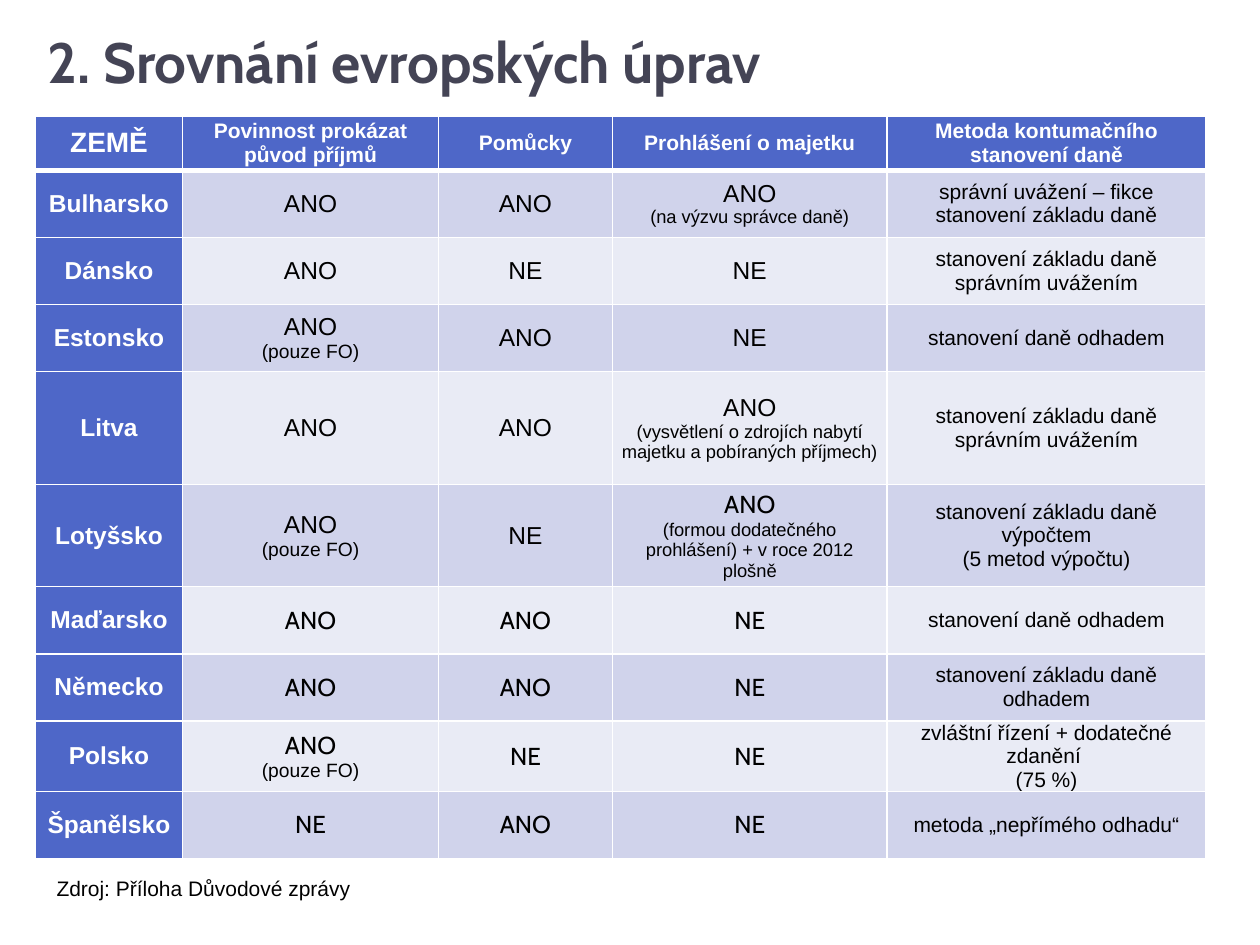
from dataclasses import dataclass

from lxml.etree import SubElement
from pptx import Presentation
from pptx.dml.color import RGBColor
from pptx.enum.text import MSO_ANCHOR, MSO_AUTO_SIZE, PP_ALIGN
from pptx.oxml.ns import qn
from pptx.util import Pt


@dataclass(frozen=True)
class Theme:
    blue: str = "4E67C8"
    band_dark: str = "D0D3EB"
    band_light: str = "E9EBF5"
    white: str = "FFFFFF"
    black: str = "000000"
    title_color: str = "444455"
    body_font: str = "Arial"
    accent_font: str = "Cabin"
    title_size: float = 32.4
    corner_size: float = 16
    answer_size: float = 14
    text_size: float = 12
    note_size: float = 11
    small_note_size: float = 10.5


theme = Theme()


def add_run(paragraph, text, size, color, font=theme.body_font, bold=False):
    run = paragraph.add_run()
    run.text = text
    run.font.name = font
    run.font.size = Pt(size)
    run.font.bold = bold
    run.font.color.rgb = RGBColor.from_string(color)


def add_border(cell, side, width):
    properties = cell._tc.get_or_add_tcPr()
    line = SubElement(properties, qn(f"a:{side}"), w=str(Pt(width)))
    fill = SubElement(line, qn("a:solidFill"))
    SubElement(fill, qn("a:srgbClr"), val=theme.white)


headers = ["ZEMĚ", "Povinnost prokázat původ příjmů", "Pomůcky",
           "Prohlášení o majetku", "Metoda kontumačního stanovení daně"]
countries = [
    ["Bulharsko", ["ANO"], ["ANO"], ["ANO", "(na výzvu správce daně)"],
     ["správní uvážení – fikce stanovení základu daně"]],
    ["Dánsko", ["ANO"], ["NE"], ["NE"], ["stanovení základu daně správním uvážením"]],
    ["Estonsko", ["ANO", "(pouze FO)"], ["ANO"], ["NE"], ["stanovení daně odhadem"]],
    ["Litva", ["ANO"], ["ANO"],
     ["ANO", "(vysvětlení o zdrojích nabytí majetku a pobíraných příjmech)"],
     ["stanovení základu daně správním uvážením"]],
    ["Lotyšsko", ["ANO", "(pouze FO)"], ["NE"],
     ["ANO", "(formou dodatečného prohlášení) + v roce 2012 plošně"],
     ["stanovení základu daně výpočtem", "(5 metod výpočtu)"]],
    ["Maďarsko", ["ANO"], ["ANO"], ["NE"], ["stanovení daně odhadem"]],
    ["Německo", ["ANO"], ["ANO"], ["NE"], ["stanovení základu daně odhadem"]],
    ["Polsko", ["ANO", "(pouze FO)"], ["NE"], ["NE"],
     ["zvláštní řízení + dodatečné zdanění ", "(75 %)"]],
    ["Španělsko", ["NE"], ["ANO"], ["NE"], ["metoda „nepřímého odhadu“"]],
]
column_widths = [84.2, 146.2, 99.4, 157, 182.2]
row_heights = [31, 38.4, 38.4, 38.4, 64.5, 58.3, 38.4, 38.4, 38.9, 38.4]
first_accent_row = 6
accent_cells = {(5, 3)}

presentation = Presentation()
presentation.slide_width = Pt(720)
presentation.slide_height = Pt(540)
slide = presentation.slides.add_slide(presentation.slide_layouts[6])

table = slide.shapes.add_table(
    len(row_heights), len(column_widths), Pt(20.2), Pt(66.3),
    Pt(sum(column_widths)), Pt(sum(row_heights))).table
table.first_col = True
for column, width in zip(table.columns, column_widths):
    column.width = Pt(width)
for row, height in zip(table.rows, row_heights):
    row.height = Pt(height)

rows = [[[header] for header in headers]]
rows += [[[country], *answers] for country, *answers in countries]
for row_index, row in enumerate(rows):
    for column_index, lines in enumerate(row):
        cell = table.cell(row_index, column_index)
        cell.vertical_anchor = MSO_ANCHOR.MIDDLE
        cell.margin_left = cell.margin_right = Pt(3.6)
        cell.margin_top = cell.margin_bottom = 0
        for side in ("lnL", "lnR", "lnT", "lnB"):
            header_edge = (row_index, side) in ((0, "lnB"), (1, "lnT"))
            add_border(cell, side, 3 if header_edge else 1)

        heading = row_index == 0 or column_index == 0
        band = theme.band_dark if row_index % 2 else theme.band_light
        cell.fill.solid()
        cell.fill.fore_color.rgb = RGBColor.from_string(theme.blue if heading else band)

        paragraph = cell.text_frame.paragraphs[0]
        for line_index, line in enumerate(lines):
            if line_index and line.startswith("(75"):
                paragraph.add_line_break()
            elif line_index:
                paragraph = cell.text_frame.add_paragraph()
            paragraph.alignment = PP_ALIGN.CENTER
            font = theme.body_font
            if heading:
                paragraph.space_after = Pt(6)
                size = theme.text_size if row_index == 0 else theme.answer_size
                if row_index == column_index:
                    size = theme.corner_size
            elif column_index == 4:
                size = theme.text_size
            elif line_index:
                size = theme.note_size if column_index == 1 else theme.small_note_size
            else:
                size = theme.answer_size
                if row_index >= first_accent_row or (row_index, column_index) in accent_cells:
                    font = theme.accent_font
            add_run(paragraph, line, size, theme.white if heading else theme.black, font, heading)

title = slide.shapes.add_textbox(Pt(20.2), Pt(15.1), Pt(708.5), Pt(39.6))
title.text_frame.word_wrap = True
title.text_frame.vertical_anchor = MSO_ANCHOR.MIDDLE
add_run(title.text_frame.paragraphs[0], "2. Srovnání evropských úprav",
        theme.title_size, theme.title_color, theme.accent_font, True)

source = slide.shapes.add_textbox(Pt(25.2), Pt(496.8), Pt(493.2), Pt(21.6))
source.text_frame.word_wrap = True
source.text_frame.auto_size = MSO_AUTO_SIZE.SHAPE_TO_FIT_TEXT
add_run(source.text_frame.paragraphs[0], "Zdroj: Příloha Důvodové zprávy",
        theme.text_size, theme.black)

presentation.save("out.pptx")
